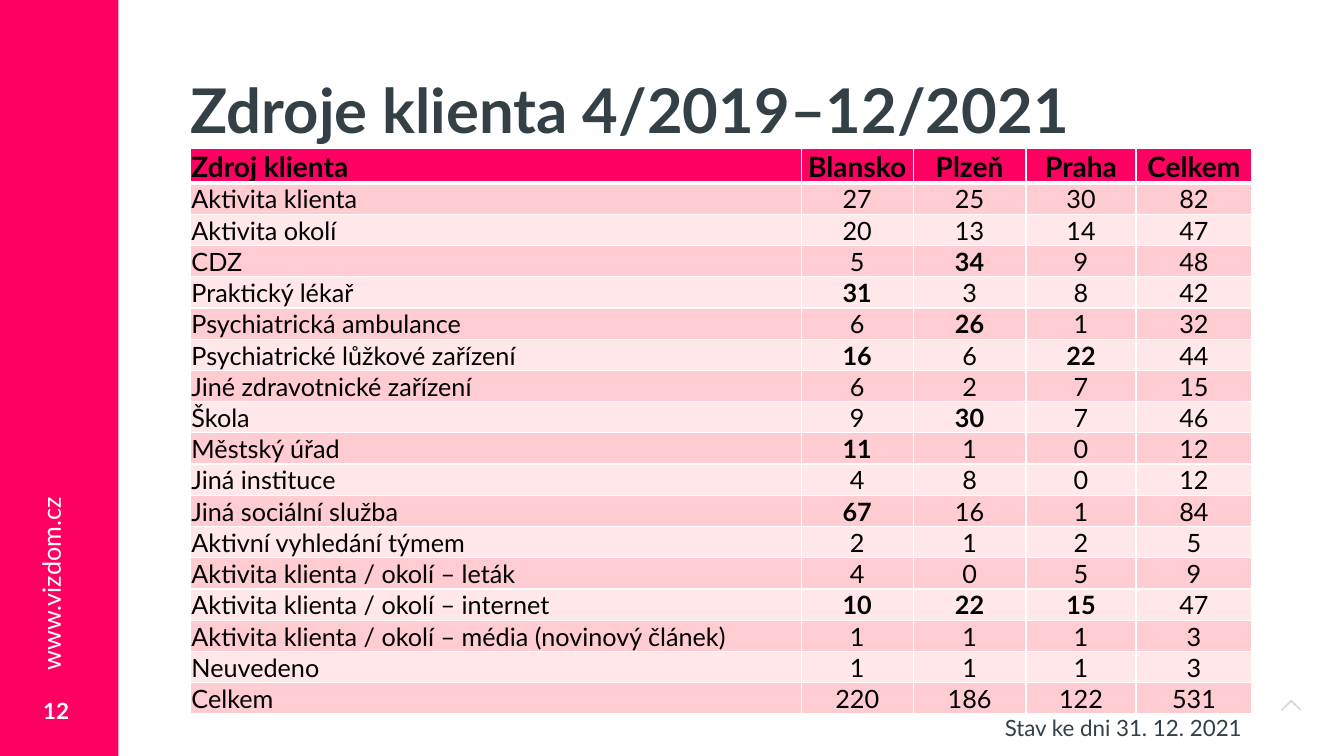
"""Build the slide with the table of client sources by city."""
from lxml import etree
from pptx import Presentation
from pptx.dml.color import RGBColor
from pptx.enum.shapes import MSO_SHAPE
from pptx.enum.text import MSO_ANCHOR, PP_ALIGN
from pptx.oxml.ns import qn
from pptx.util import Pt

RECTANGLE = MSO_SHAPE.RECTANGLE
TOP, MIDDLE, BOTTOM = MSO_ANCHOR.TOP, MSO_ANCHOR.MIDDLE, MSO_ANCHOR.BOTTOM
LEFT, CENTER, RIGHT = PP_ALIGN.LEFT, PP_ALIGN.CENTER, PP_ALIGN.RIGHT
PINK, LIGHT_PINK, PALE_PINK = "FE0061", "FFCCD2", "FFE7EA"
SLATE, WHITE, BLACK = "344046", "FFFFFF", "000000"

HEADINGS = ("Zdroj klienta", "Blansko", "Plzeň", "Praha", "Celkem")
SOURCES = [
    ("Aktivita klienta", 27, 25, 30, 82),
    ("Aktivita okolí", 20, 13, 14, 47),
    ("CDZ", 5, 34, 9, 48),
    ("Praktický lékař", 31, 3, 8, 42),
    ("Psychiatrická ambulance", 6, 26, 1, 32),
    ("Psychiatrické lůžkové zařízení", 16, 6, 22, 44),
    ("Jiné zdravotnické zařízení", 6, 2, 7, 15),
    ("Škola", 9, 30, 7, 46),
    ("Městský úřad", 11, 1, 0, 12),
    ("Jiná instituce", 4, 8, 0, 12),
    ("Jiná sociální služba", 67, 16, 1, 84),
    ("Aktivní vyhledání týmem", 2, 1, 2, 5),
    ("Aktivita klienta / okolí – leták", 4, 0, 5, 9),
    ("Aktivita klienta / okolí – internet", 10, 22, 15, 47),
    ("Aktivita klienta / okolí – média (novinový článek)", 1, 1, 1, 3),
    ("Neuvedeno", 1, 1, 1, 3),
    ("Celkem", 220, 186, 122, 531),
]
BOLD_COLUMNS = {
    "CDZ": (2,),
    "Praktický lékař": (1,),
    "Psychiatrická ambulance": (2,),
    "Psychiatrické lůžkové zařízení": (1, 3),
    "Škola": (2,),
    "Městský úřad": (1,),
    "Jiná sociální služba": (1,),
    "Aktivita klienta / okolí – internet": (1, 2, 3),
}


def color(hex_string):
    """Turn a hex string into a colour."""
    return RGBColor.from_string(hex_string)


def write(text_frame, text, size, hex_string, bold=False, alignment=LEFT):
    """Put one formatted paragraph into a text frame."""
    text_frame.text = text
    paragraph = text_frame.paragraphs[0]
    paragraph.alignment = alignment
    font = paragraph.runs[0].font
    font.name, font.size, font.bold = "Lato", Pt(size), bold
    font.color.rgb = color(hex_string)


presentation = Presentation()
presentation.slide_width, presentation.slide_height = Pt(960), Pt(540)
slide = presentation.slides.add_slide(presentation.slide_layouts[6])
shapes = slide.shapes

builder = shapes.build_freeform(Pt(922.3), Pt(499.7))
chevron_points = [(929.5, 506.9), (928.8, 507.6), (922.3, 501.6), (915.8, 507.6), (915.1, 506.9)]
builder.add_line_segments([(Pt(x), Pt(y)) for x, y in chevron_points], close=True)
chevron = builder.convert_to_shape()
sidebar = shapes.add_shape(RECTANGLE, Pt(0), Pt(0), Pt(84.5), Pt(546.5))
for shape, fill_color in ((chevron, SLATE), (sidebar, PINK)):
    shape.shadow.inherit = False
    shape.fill.solid()
    shape.fill.fore_color.rgb = color(fill_color)
    shape.line.fill.background()
chevron_color = chevron.element.spPr.find(qn("a:solidFill"))[0]
etree.SubElement(chevron_color, qn("a:alpha"), val="20000")

LABELS = [
    ("12", 23.8, 486, 36, 43.2, 0, 16, WHITE, True, LEFT, MIDDLE),
    ("www.vizdom.cz", -49, 385.2, 171.4, 29.5, 270, 18, WHITE, False, LEFT, TOP),
    ("Zdroje klienta 4/2019–12/2021", 136.1, 28.8, 758.2, 104.4, 0, 44, SLATE, True, LEFT, MIDDLE),
    ("Stav ke dni 31. 12. 2021", 601.2, 506.9, 293, 26.6, 0, 16, SLATE, False, RIGHT, TOP),
]
for text, left, top, width, height, rotation, size, text_color, bold, alignment, anchor in LABELS:
    label = shapes.add_textbox(Pt(left), Pt(top), Pt(width), Pt(height))
    label.rotation = rotation
    text_frame = label.text_frame
    text_frame.word_wrap = True
    text_frame.vertical_anchor = anchor
    write(text_frame, text, size, text_color, bold, alignment)
    if size == 44:
        text_frame.margin_left = text_frame.margin_right = 0
        text_frame.paragraphs[0].line_spacing = 0.9

rows = [HEADINGS] + SOURCES
table = shapes.add_table(
    len(rows), len(HEADINGS), Pt(136.1), Pt(106), Pt(758.2), Pt(388.8)
).table
for column, width in zip(table.columns, (436.2, 80, 80.6, 78.6, 82.8)):
    column.width = Pt(width)

for row_index, row in enumerate(rows):
    table.rows[row_index].height = Pt(21.6)
    is_header = row_index == 0
    fill_color = PINK if is_header else (PALE_PINK, LIGHT_PINK)[row_index % 2]
    border_widths = {
        "a:lnL": 1,
        "a:lnR": 1,
        "a:lnT": 3 if row_index == 1 else 1,
        "a:lnB": 3 if is_header else 1,
    }
    for column_index, value in enumerate(row):
        cell = table.cell(row_index, column_index)
        cell.margin_left = cell.margin_right = cell.margin_top = Pt(0.7)
        cell.margin_bottom = 0
        cell.vertical_anchor = BOTTOM
        bold = is_header or column_index in BOLD_COLUMNS.get(row[0], ())
        alignment = CENTER if column_index else LEFT
        write(cell.text_frame, str(value), 20 if is_header else 18, BLACK, bold, alignment)
        cell_properties = cell._tc.get_or_add_tcPr()
        for tag, border_width in border_widths.items():
            border = etree.SubElement(cell_properties, qn(tag), w=str(Pt(border_width)))
            border_fill = etree.SubElement(border, qn("a:solidFill"))
            etree.SubElement(border_fill, qn("a:srgbClr"), val=WHITE)
        cell.fill.solid()
        cell.fill.fore_color.rgb = color(fill_color)

presentation.save("out.pptx")
